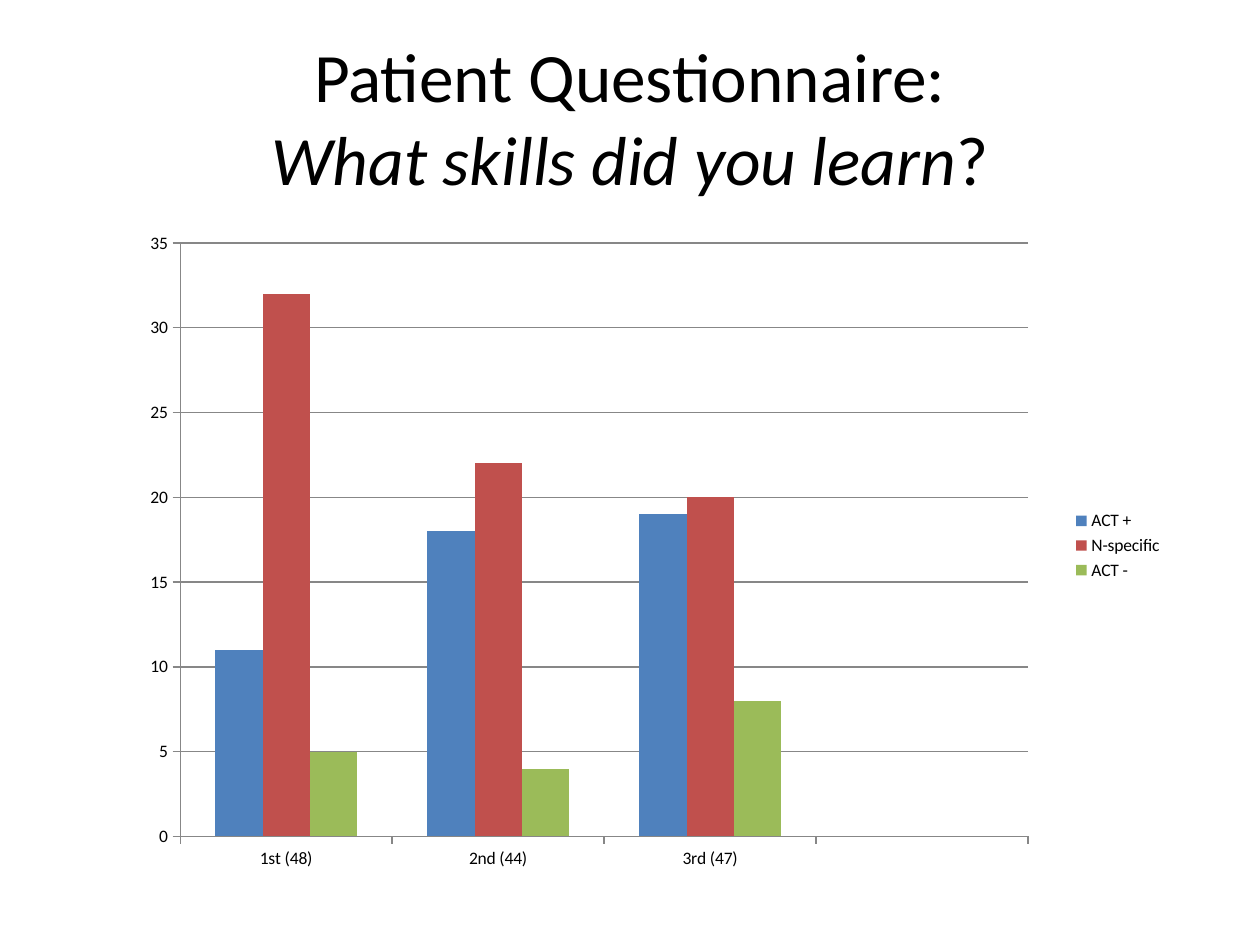
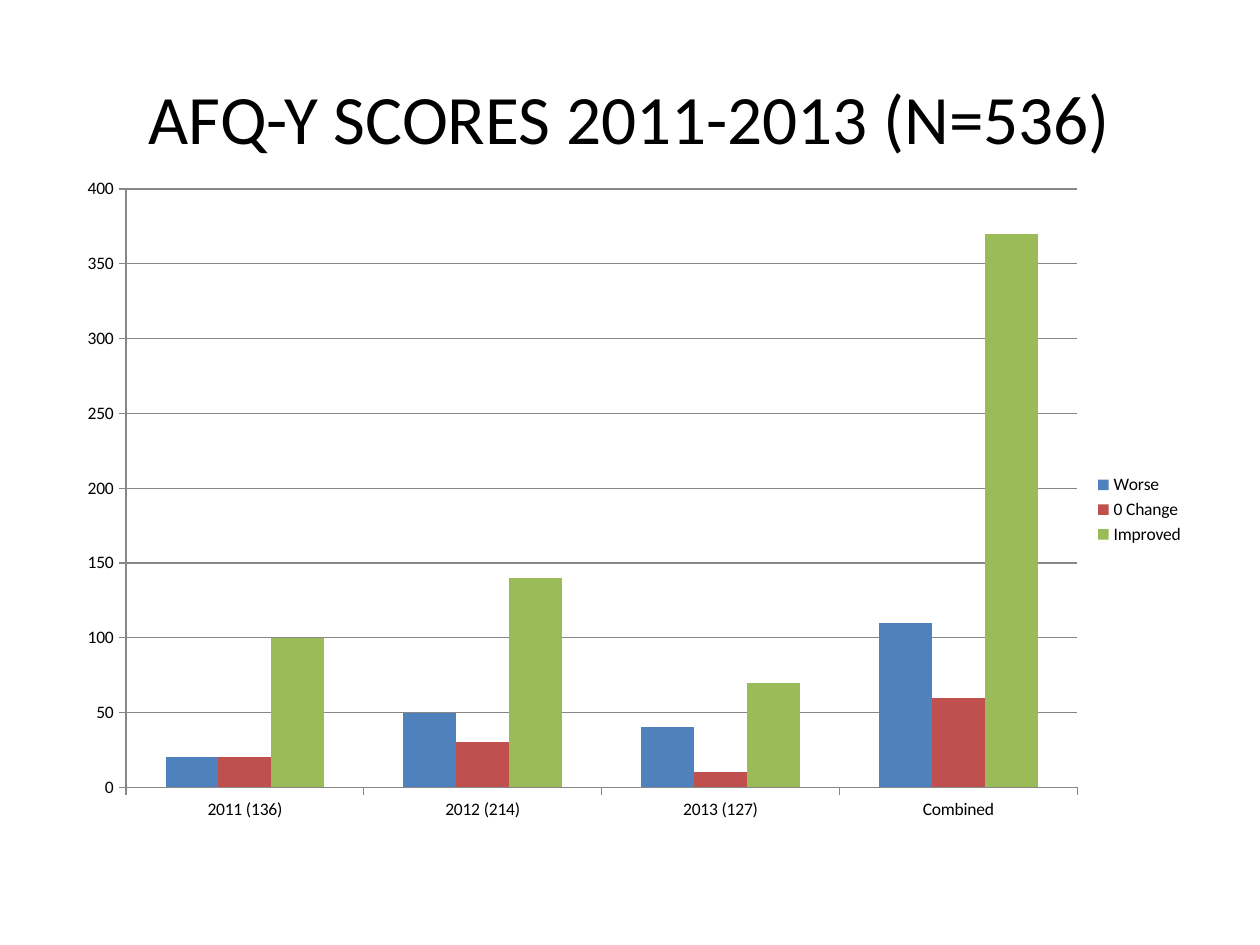
from lxml import etree
from pptx import Presentation
from pptx import util as u
from pptx.chart.data import CategoryChartData
from pptx.dml.color import RGBColor
from pptx.enum import chart as ch, text

FONT = "Calibri"
COLOURS = {
    "text": "000000",
    "grid": "878787",
    "first": "4F81BD",
    "second": "C0504D",
    "third": "9BBB59",
}
SERIES_COLOURS = ("first", "second", "third")
CHART_NS = "http://schemas.openxmlformats.org/drawingml/2006/chart"


def inches(box):
    return [u.Inches(length) for length in box]


def set_attributes(target, values):
    for name, value in values.items():
        setattr(target, name, value)


class Deck:
    """Holds the shared style and the current slide."""

    def __init__(self):
        self.presentation = Presentation()
        self.presentation.slide_width = u.Inches(10)
        self.presentation.slide_height = u.Inches(7.5)
        self.slide = None

    def add_slide(self):
        layout = self.presentation.slide_layouts[6]
        self.slide = self.presentation.slides.add_slide(layout)

    def colour(self, name):
        return RGBColor.from_string(COLOURS[name])

    def style_font(self, font, size, **extra):
        set_attributes(font, {"name": FONT, "size": u.Pt(size), **extra})
        font.color.rgb = self.colour("text")

    def style_line(self, line):
        line.color.rgb = self.colour("grid")
        line.width = u.Pt(0.75)

    def add_title(self, *lines):
        """Each line is a list of (wording, italic) runs."""
        shape = self.slide.shapes.add_textbox(*inches((0.5, 0.3, 9, 1.25)))
        frame = shape.text_frame
        set_attributes(frame, {
            "word_wrap": True,
            "auto_size": text.MSO_AUTO_SIZE.NONE,
            "vertical_anchor": text.MSO_ANCHOR.MIDDLE,
        })
        paragraph = frame.paragraphs[0]
        paragraph.alignment = text.PP_ALIGN.CENTER
        self.style_font(paragraph.font, 39.6)
        for number, line in enumerate(lines):
            if number:
                paragraph.add_line_break()
            for wording, italic in line:
                run = paragraph.add_run()
                run.text = wording
                self.style_font(run.font, 39.6, italic=italic)

    def add_column_chart(self, box, plot, categories, series, top, step):
        data = CategoryChartData()
        data.categories = categories
        for name, values in series.items():
            data.add_series(name, values)
        chart = self.slide.shapes.add_chart(
            ch.XL_CHART_TYPE.COLUMN_CLUSTERED, *inches(box), data).chart
        chart.has_title = False
        self.style_font(chart.font, 10)

        # Columns
        columns = chart.plots[0]
        set_attributes(columns, {
            "gap_width": 150, "overlap": 0, "vary_by_categories": False})
        for item, name in zip(columns.series, SERIES_COLOURS):
            item.format.fill.solid()
            item.format.fill.fore_color.rgb = self.colour(name)

        # Axes
        for axis in (chart.category_axis, chart.value_axis):
            axis.major_tick_mark = ch.XL_TICK_MARK.OUTSIDE
            self.style_line(axis.format.line)
        set_attributes(chart.value_axis, {
            "minimum_scale": 0, "maximum_scale": top, "major_unit": step,
            "has_major_gridlines": True})
        self.style_line(chart.value_axis.major_gridlines.format.line)

        # Legend
        chart.has_legend = True
        set_attributes(chart.legend, {
            "position": ch.XL_LEGEND_POSITION.RIGHT,
            "include_in_layout": False})
        self.place_plot(chart, box, plot)

    def place_plot(self, chart, box, plot):
        """Fix the inner plot area, given in inches inside the chart box."""
        area = chart.element.find(f".//{{{CHART_NS}}}plotArea")
        for old in area.findall(f"{{{CHART_NS}}}layout"):
            area.remove(old)
        layout = etree.Element(f"{{{CHART_NS}}}layout")
        manual = etree.SubElement(layout, f"{{{CHART_NS}}}manualLayout")
        width, height = box[2:]
        fractions = [length / whole for length, whole
                     in zip(plot, (width, height, width, height))]
        settings = [("layoutTarget", "inner"), ("xMode", "edge"),
                    ("yMode", "edge"), *zip("xywh", fractions)]
        for tag, value in settings:
            etree.SubElement(manual, f"{{{CHART_NS}}}{tag}", val=str(value))
        area.insert(0, layout)


def main():
    deck = Deck()

    # Skills learned
    deck.add_slide()
    deck.add_title(
        [("Patient Questionnaire:", False)],
        [("What skills did you learn", True), ("?", False)])
    deck.add_column_chart(
        box=(0.58, 1.58, 8.75, 5.5),
        plot=(0.85, 0.35, 6.73, 4.71),
        categories=["1st (48)", "2nd (44)", "3rd (47)", ""],
        series={
            "ACT +": (11, 18, 19, None),
            "N-specific": (32, 22, 20, None),
            "ACT -": (5, 4, 8, None),
        },
        top=35, step=5)

    # Scores by year
    deck.add_slide()
    deck.add_title([("AFQ-Y SCORES 2011-2013 (N=536)", False)])
    deck.add_column_chart(
        box=(0.5, 1.42, 9, 5.25),
        plot=(0.5, 0.08, 7.55, 4.75),
        categories=["2011 (136)", "2012 (214)", "2013 (127)", "Combined"],
        series={
            "Worse": (20, 50, 40, 110),
            "0 Change": (20, 30, 10, 60),
            "Improved": (100, 140, 70, 370),
        },
        top=400, step=50)

    deck.presentation.save("out.pptx")


if __name__ == "__main__":
    main()
